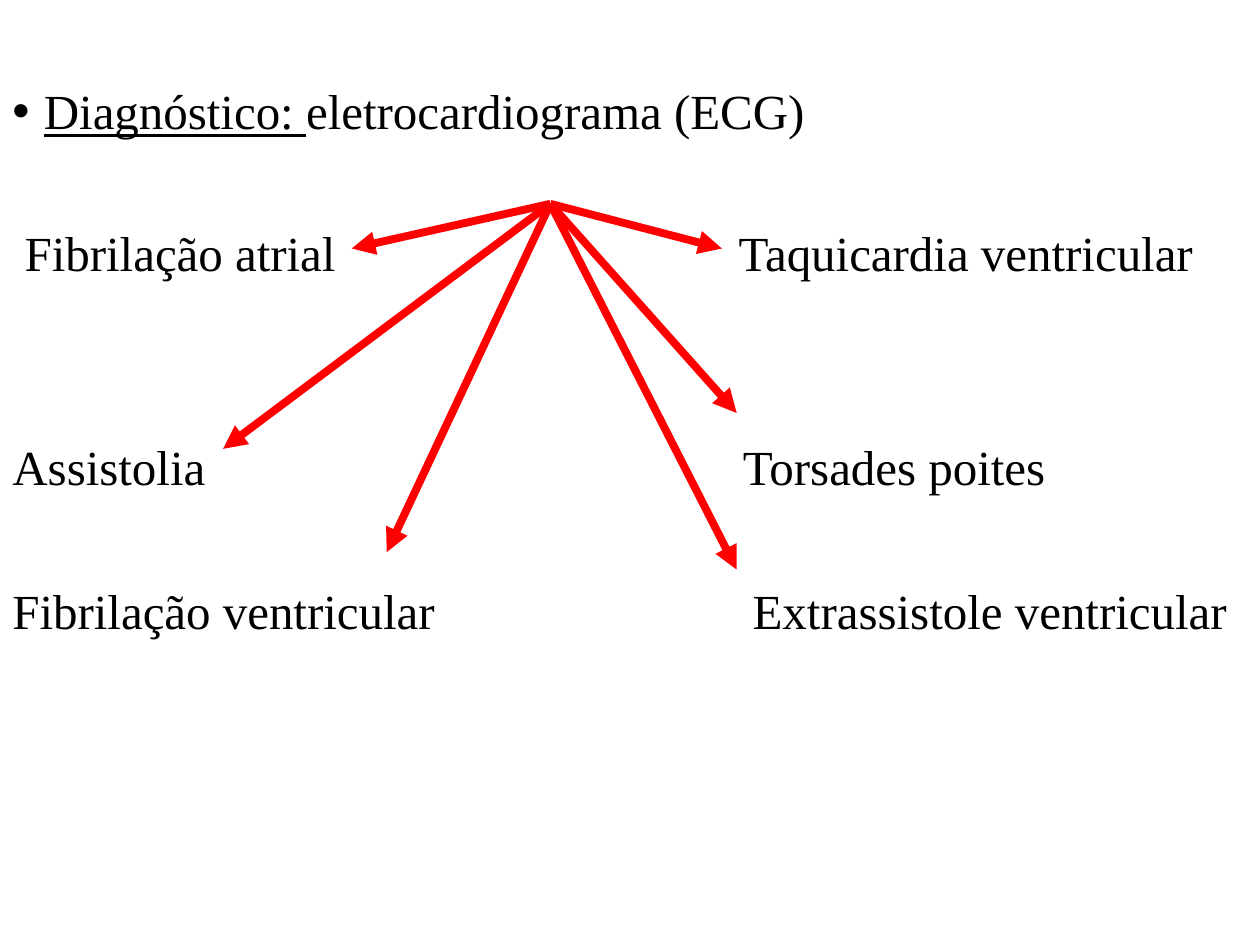
import pptx
import pptx.util
import pptx.dml.color
import pptx.enum.shapes
import pptx.enum.text
import pptx.oxml.ns
from lxml import etree

Pt = pptx.util.Pt
qn = pptx.oxml.ns.qn

HEADING = ("Diagnóstico: ", "eletrocardiograma (ECG)")
# text with tabs, tab stops, space before
ROWS = [
    ("\tFibrilação atrial\tTaquicardia ventricular", (7, 415), 51),
    ("Assistolia\tTorsades poites", (417.5,), 92),
    ("Fibrilação ventricular\tExtrassistole ventricular", (423,), 51.5),
]
ARROW_START = (314.5, 116.5)
ARROW_ENDS = [(201, 142), (127.5, 256.5), (221, 315.5),
              (412.5, 142), (421, 236), (421, 325.5)]


def rgb(hex_color):
    return pptx.dml.color.RGBColor.from_string(hex_color)


def format_paragraph(p, space_before=0):
    p.line_spacing = 0.9
    p.space_before = Pt(space_before)
    for r in p.runs:
        r.font.name = "Times New Roman"
        r.font.size = Pt(28)
        r.font.color.rgb = rgb("000000")


def add_bullet(p, indent):
    pPr = p._p.get_or_add_pPr()
    pPr.set("marL", str(Pt(indent)))
    pPr.set("indent", str(-Pt(indent)))
    etree.SubElement(pPr, qn("a:buFont"), typeface="Arial")
    etree.SubElement(pPr, qn("a:buChar"), char="•")


def add_tabs(p, stops):
    tabs = etree.SubElement(p._p.get_or_add_pPr(), qn("a:tabLst"))
    for stop in stops:
        etree.SubElement(tabs, qn("a:tab"), pos=str(Pt(stop)), algn="l")


def add_arrow(slide, start, end):
    line = slide.shapes.add_connector(
        pptx.enum.shapes.MSO_CONNECTOR.STRAIGHT, *map(Pt, start + end))
    line.line.color.rgb = rgb("FF0000")
    line.line.width = Pt(4.5)
    etree.SubElement(line.line._get_or_add_ln(), qn("a:tailEnd"), type="triangle")
    etree.SubElement(line._element.spPr, qn("a:effectLst"))


prs = pptx.Presentation()
prs.slide_width, prs.slide_height = Pt(720), Pt(540)
slide = prs.slides.add_slide(prs.slide_layouts[6])

body = slide.shapes.add_textbox(0, 0, prs.slide_width, prs.slide_height)
tf = body.text_frame
tf.word_wrap = True
tf.auto_size = pptx.enum.text.MSO_AUTO_SIZE.NONE
tf.margin_top = Pt(50)

p = tf.paragraphs[0]
add_bullet(p, 18)
for text in HEADING:
    p.add_run().text = text
p.runs[0].font.underline = True
format_paragraph(p)

for text, stops, space_before in ROWS:
    p = tf.add_paragraph()
    p.text = text
    add_tabs(p, stops)
    format_paragraph(p, space_before)

for end in ARROW_ENDS:
    add_arrow(slide, ARROW_START, end)

prs.save("out.pptx")
